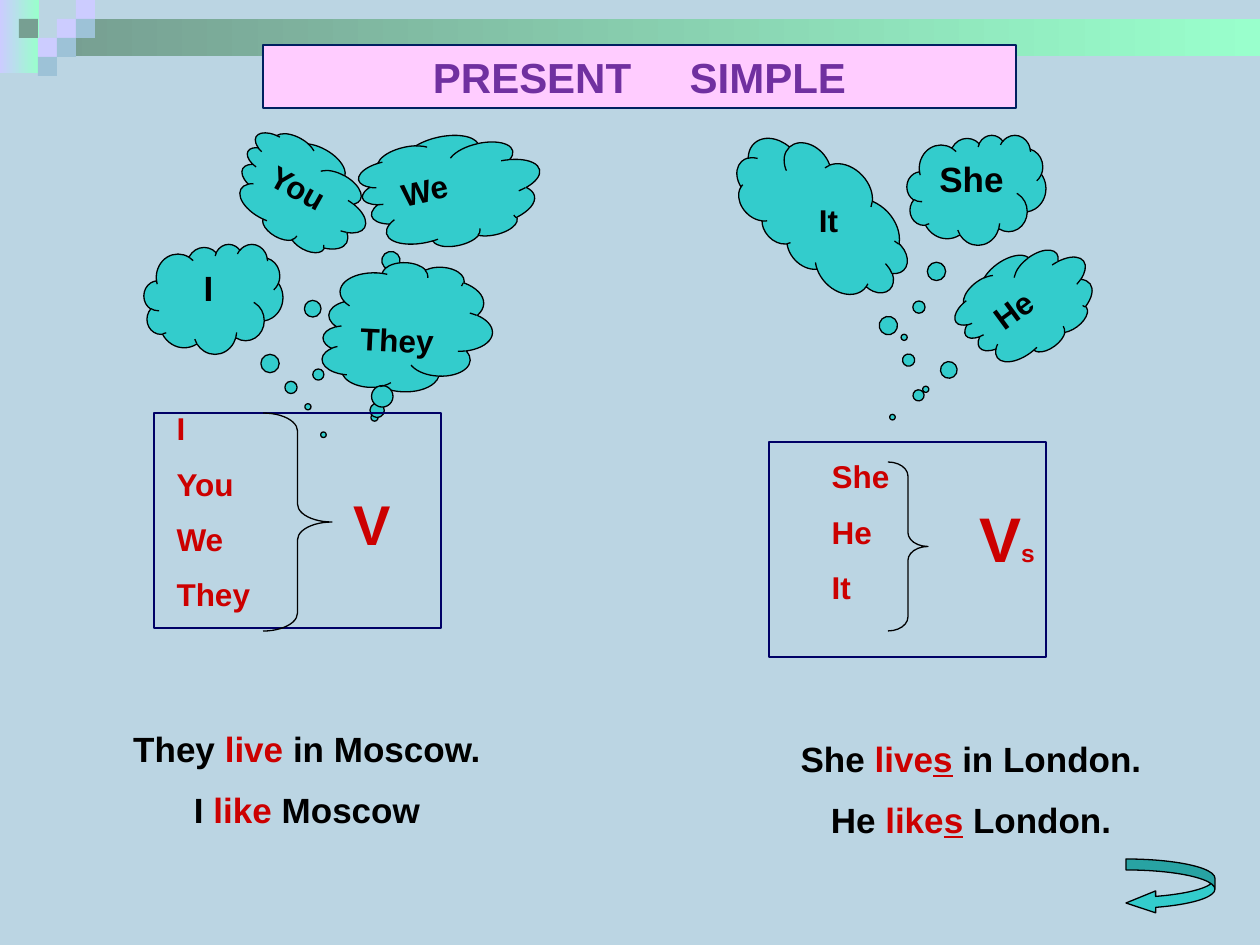
from dataclasses import dataclass

from lxml.etree import SubElement
from pptx import Presentation
from pptx.dml.color import RGBColor
from pptx.enum.shapes import MSO_SHAPE
from pptx.enum.text import MSO_ANCHOR, MSO_AUTO_SIZE, PP_ALIGN
from pptx.oxml.ns import qn
from pptx.util import Pt


@dataclass
class Theme:
    font = "Arial"
    back = RGBColor.from_string("BBD5E3")
    lilac = RGBColor.from_string("CCCCFF")
    mint = RGBColor.from_string("99FFCC")
    sage = RGBColor.from_string("779F92")
    blue = RGBColor.from_string("9DC2D7")
    teal = RGBColor.from_string("33CCCC")
    pink = RGBColor.from_string("FFCCFF")
    violet = RGBColor.from_string("7030A0")
    navy = RGBColor.from_string("002060")
    frame = RGBColor.from_string("000066")
    red = RGBColor.from_string("CC0000")
    black = RGBColor.from_string("000000")
    head, text, big, small = 24, 18, 20, 14
    verb, verbs = 32, 36
    rule = Pt(0.75)


theme = Theme()
PX = 914400 / 126


def draw(kind, box, fill=None, line=None, adj=()):
    """Add a shape; a list of two colours as fill makes a gradient."""
    shape = slide.shapes.add_shape(kind, *[round(v * PX) for v in box])
    shape.shadow.inherit = False
    if isinstance(fill, list):
        shape.fill.gradient()
        shape.fill.gradient_angle = 0
        for stop, color in zip(shape.fill.gradient_stops, fill):
            stop.color.rgb = color
    elif fill is not None:
        shape.fill.solid()
        shape.fill.fore_color.rgb = fill
    else:
        shape.fill.background()
    if line is not None:
        shape.line.color.rgb = line
        shape.line.width = theme.rule
    else:
        shape.line.fill.background()
    for i, value in enumerate(adj):
        shape.adjustments[i] = value
    return shape


def write(shape, lines, size, color, align=PP_ALIGN.CENTER, anchor=MSO_ANCHOR.TOP):
    """Fill a shape with lines, each a tuple of run texts."""
    frame = shape.text_frame
    frame.word_wrap = True
    frame.auto_size = MSO_AUTO_SIZE.NONE
    frame.vertical_anchor = anchor
    for i, parts in enumerate(lines):
        para = frame.add_paragraph() if i else frame.paragraphs[0]
        para.alignment = align
        para.space_before = Pt(round(size * 0.57) if i else 0)
        para.font.name = theme.font
        para.font.size = Pt(size)
        para.font.bold = True
        para.font.color.rgb = color
        for part in parts:
            para.add_run().text = part
    return frame.paragraphs


prs = Presentation()
prs.slide_width, prs.slide_height = round(1260 * PX), round(945 * PX)
slide = prs.slides.add_slide(prs.slide_layouts[3])
slide.background.fill.solid()
slide.background.fill.fore_color.rgb = theme.back
title, left, right = slide.placeholders

# Top band with its checker of small squares
draw(MSO_SHAPE.RECTANGLE, (0, 0, 39, 73), [theme.lilac, theme.mint])
draw(MSO_SHAPE.RECTANGLE, (57, 19, 1203, 37), [theme.sage, theme.mint])
cell = 19
for col, row, color in [
    (3, 1, theme.lilac), (4, 0, theme.lilac), (4, 1, theme.blue),
    (2, 2, theme.lilac), (1, 1, theme.sage), (3, 2, theme.blue),
    (2, 3, theme.blue),
]:
    draw(MSO_SHAPE.RECTANGLE, (col * cell, row * cell, cell, cell), color)

# Pronoun clouds: word, box, turn, tail
for word, box, turn, tail in [
    ("I", (144, 244, 139, 110), 0, (0.68, 0.98)),
    ("You", (253, 125, 100, 139), 299.1, (-2, 0.97)),
    ("We", (397, 101, 110, 179), 257.5, (-0.77, -0.64)),
    ("They", (343, 243, 129, 169), 272.7, (0.71, -0.17)),
    ("He", (978, 234, 100, 139), 233.6, (-0.11, -1.27)),
    ("", (724, 160, 199, 110), 226.7, (-0.99, -0.41)),
    ("She", (907, 135, 139, 110), 0, (-0.52, 1.34)),
]:
    cloud = draw(MSO_SHAPE.CLOUD_CALLOUT, box, theme.teal, theme.black, tail)
    cloud.rotation = turn
    if word:
        low = word == "They"
        write(cloud, [(word,)], theme.text if turn else theme.big, theme.black,
              anchor=MSO_ANCHOR.BOTTOM if low else MSO_ANCHOR.TOP)
        if turn:
            cloud.text_frame._txBody.bodyPr.set("vert", "eaVert")
        if low:
            cloud.element.spPr.xfrm.set("flipH", "1")

# Pronoun lists in the body placeholders
for body, box, words in [
    (left, (164, 403, 338, 285), ("I", "You", "We", "They")),
    (right, (819, 451, 198, 222), ("She", "He", "It")),
]:
    body.left, body.top, body.width, body.height = [round(v * PX) for v in box]
    for para in write(body, [(word,) for word in words], theme.text, theme.red,
                      PP_ALIGN.LEFT):
        props = para._p.get_or_add_pPr()
        props.set("marL", "0")
        props.set("indent", "0")
        bullet = SubElement(props, qn("a:buNone"))
        props.find(qn("a:defRPr")).addprevious(bullet)

# Frames and braces
for box, brace, bend in [
    ((154, 413, 287, 215), (263, 413, 69, 218), 0.26),
    ((769, 442, 277, 215), (888, 462, 40, 169), 0.35),
]:
    draw(MSO_SHAPE.RECTANGLE, box, line=theme.frame)
    draw(MSO_SHAPE.RIGHT_BRACE, brace, line=theme.black, adj=(bend, 0.5))

# Free text: verb forms, the loose pronoun and the sample sentences
for box, lines, size, color in [
    ((789, 195, 79, 50), [("It",)], theme.text, theme.black),
    ((333, 483, 79, 79), [("V",)], theme.verb, theme.red),
    ((948, 493, 118, 88), [("V", "s")], theme.verbs, theme.red),
    ((84, 721, 446, 117),
     [("They ", "live", " in Moscow."), ("I ", "like", " Moscow")],
     theme.big, theme.black),
    ((748, 731, 446, 117),
     [("She ", "live", "s", " in London."), ("He ", "like", "s", " London.")],
     theme.big, theme.black),
]:
    note = slide.shapes.add_textbox(*[round(v * PX) for v in box])
    for para in write(note, lines, size, color):
        for run in para.runs[1:-1]:
            run.font.color.rgb = theme.red
            if run.text == "s":
                run.font.underline = True
        if para.text == "Vs":
            para.runs[1].font.size = Pt(theme.small)

# Title, brought in front of the band
title.left, title.top, title.width, title.height = [
    round(v * PX) for v in (263, 45, 753, 63)]
title.fill.solid()
title.fill.fore_color.rgb = theme.pink
title.line.color.rgb = theme.navy
title.line.width = theme.rule
heading = write(title, [("PRESENT", " ", "SIMPLE")], theme.head, theme.violet,
                anchor=MSO_ANCHOR.MIDDLE)[0]
# Letter spacing widens the gap between the two words
heading.runs[1].font._element.set("spc", "2670")
slide.shapes._spTree.append(title.element)

# Return arrow
draw(MSO_SHAPE.CURVED_LEFT_ARROW, (1126, 859, 89, 55), theme.teal, theme.black,
     (0.2, 0.4, 0.54))

prs.save("out.pptx")
